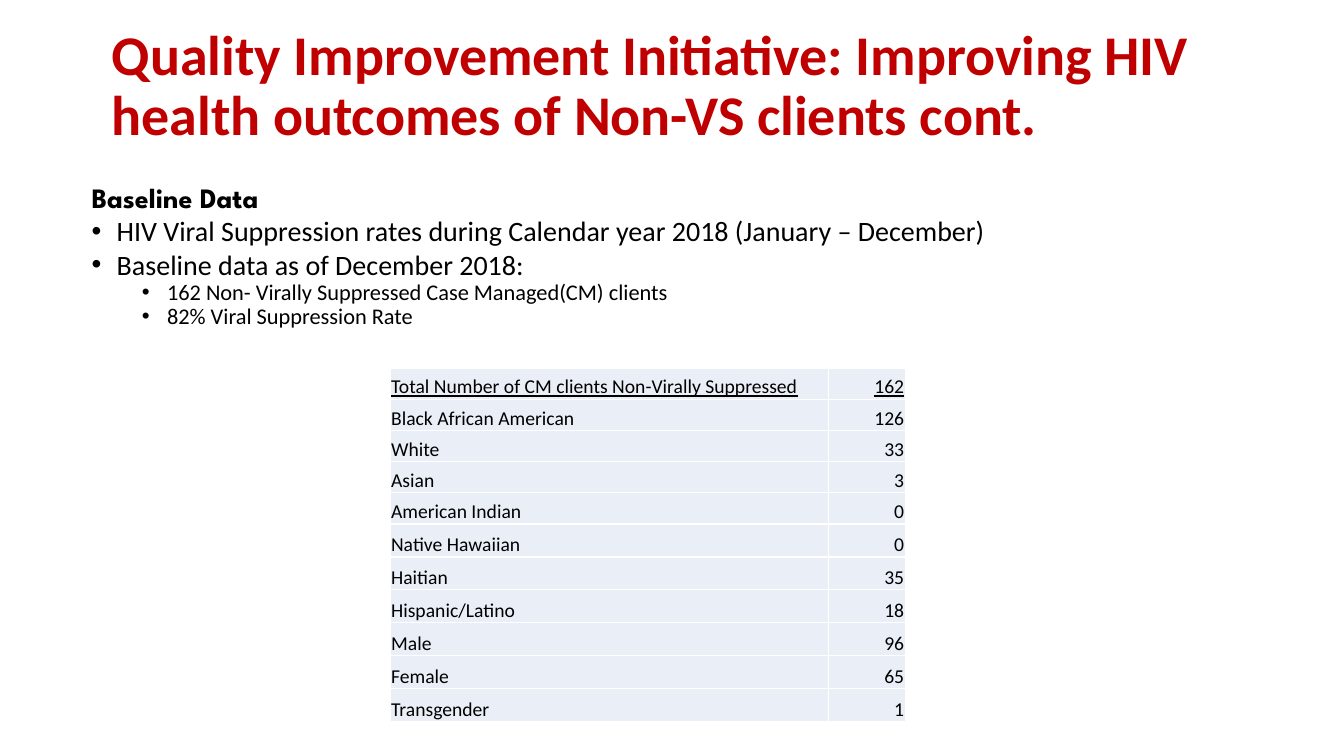
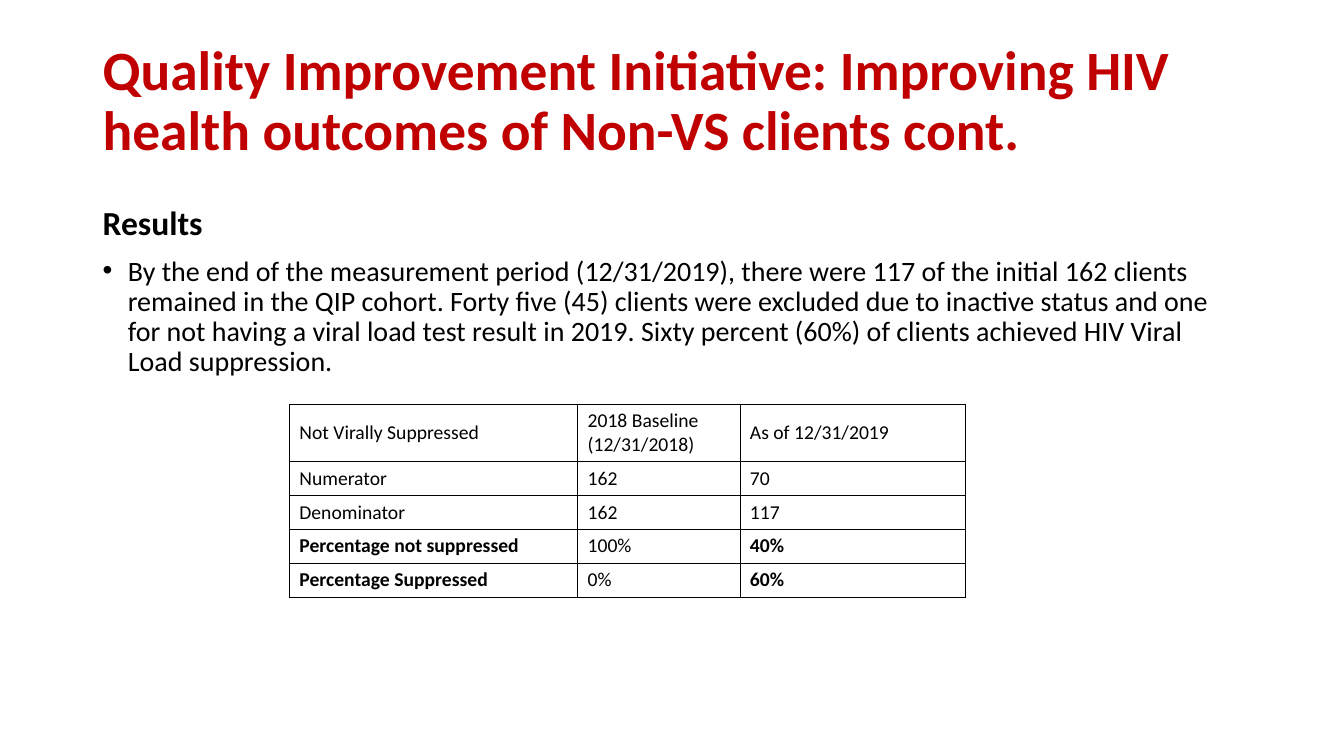
from lxml.etree import SubElement
from pptx import Presentation
from pptx.dml.color import RGBColor
from pptx.enum.text import MSO_ANCHOR, PP_ALIGN
from pptx.oxml.ns import qn
from pptx.util import Inches, Pt

COLORS = {"title": "C00000", "ink": "000000", "rule": "FFFFFF", "cell": "EAEFF7"}
TITLE = "Quality Improvement Initiative: Improving HIV health outcomes of Non-VS clients cont."
BODY_FONT = "Calibri"
HEADING_FONT = "League Spartan"


class Report:
    """Slides on a grid whose columns and rows are a tenth of an inch."""

    def __init__(self):
        self.deck = Presentation()
        self.deck.slide_width = self.grid(133.33)
        self.deck.slide_height = self.grid(75)
        self.page = None

    def grid(self, units):
        return Inches(units / 10)

    def add_page(self):
        self.page = self.deck.slides.add_slide(self.deck.slide_layouts[6])

    def add_box(self, place, anchor=MSO_ANCHOR.TOP):
        box = self.page.shapes.add_textbox(*map(self.grid, place))
        box.text_frame.word_wrap = True
        box.text_frame.vertical_anchor = anchor
        return box.text_frame

    def add_span(self, para, text, size, color="ink", font=BODY_FONT, bold=False, underline=False):
        span = para.add_run()
        span.text = text
        span.font.size = Pt(size)
        span.font.name = font
        span.font.bold = bold
        span.font.underline = underline
        span.font.color.rgb = RGBColor.from_string(COLORS[color])

    def add_bullet(self, para, indent):
        properties = para._p.get_or_add_pPr()
        properties.set("marL", str(Inches(indent)))
        properties.set("indent", str(Inches(-0.25)))
        SubElement(properties, qn("a:buFont"), typeface="Arial")
        SubElement(properties, qn("a:buChar"), char="•")

    def add_title(self, place, size):
        para = self.add_box(place, MSO_ANCHOR.MIDDLE).paragraphs[0]
        para.line_spacing = 0.9
        self.add_span(para, TITLE, size, "title", bold=True)

    def add_body(self, place, heading, bullets, heading_size, font=BODY_FONT, spacing=1, before=0):
        frame = self.add_box(place)
        para = frame.paragraphs[0]
        para.line_spacing, para.space_before = spacing, Pt(before)
        self.add_span(para, heading, heading_size, font=font, bold=True)
        for level, lines in bullets:
            para = frame.add_paragraph()
            para.level = level
            para.line_spacing = 0.9 if level else spacing
            para.space_before = Pt(before)
            self.add_bullet(para, 0.75 if level else 0.25)
            for number, line in enumerate(lines):
                if number:
                    para.add_line_break()
                self.add_span(para, line, 16 if level else 20)

    def add_borders(self, cell, color, width):
        properties = cell._tc.get_or_add_tcPr()
        for side in ("lnL", "lnR", "lnT", "lnB"):
            line = SubElement(properties, qn(f"a:{side}"), w=str(Pt(width)))
            fill = SubElement(line, qn("a:solidFill"))
            SubElement(fill, qn("a:srgbClr"), val=COLORS[color])

    def add_table(self, corner, columns, heights, rows, border, fill=None, tight=False, bold=(), underlined=()):
        place = (*corner, sum(columns), sum(heights))
        table = self.page.shapes.add_table(len(rows), len(columns), *map(self.grid, place)).table
        table.first_row = table.horz_banding = False
        for column, width in zip(table.columns, columns):
            column.width = self.grid(width)
        for top, (height, texts) in enumerate(zip(heights, rows)):
            table.rows[top].height = self.grid(height)
            for left, text in enumerate(texts):
                cell = table.cell(top, left)
                self.add_borders(cell, *border)
                if fill:
                    cell.fill.solid()
                    cell.fill.fore_color.rgb = RGBColor.from_string(COLORS[fill])
                else:
                    cell.fill.background()
                cell.vertical_anchor = MSO_ANCHOR.BOTTOM if tight else MSO_ANCHOR.MIDDLE
                para = cell.text_frame.paragraphs[0]
                if tight:
                    cell.margin_left = cell.margin_right = cell.margin_top = self.grid(0.1)
                    cell.margin_bottom = 0
                    para.alignment = PP_ALIGN.RIGHT if left else PP_ALIGN.LEFT
                self.add_span(para, text, 14, bold=(top, left) in bold, underline=top in underlined)


def add_baseline(report):
    report.add_page()
    report.add_title((10.1, 1.4, 115, 14.5), 40)
    bullets = [
        (0, ["HIV Viral Suppression rates during Calendar year 2018 (January – December)"]),
        (0, ["Baseline data as of December 2018:"]),
        (1, ["162 Non- Virally Suppressed Case Managed(CM) clients"]),
        (1, ["82% Viral Suppression Rate"]),
    ]
    report.add_body((8.1, 17.4, 117, 16), "Baseline Data", bullets, 20, HEADING_FONT)
    counts = [
        ("Total Number of CM clients Non-Virally Suppressed", "162"),
        ("Black African American", "126"),
        ("White", "33"),
        ("Asian", "3"),
        ("American Indian", "0"),
        ("Native Hawaiian", "0"),
        ("Haitian", "35"),
        ("Hispanic/Latino", "18"),
        ("Male", "96"),
        ("Female", "65"),
        ("Transgender", "1"),
    ]
    heights = [3.1] * 5 + [3.26] * 6
    report.add_table((38.7, 36.5), (43.5, 7.6), heights, counts, ("rule", 1), "cell", tight=True, underlined={0})


def add_results(report):
    report.add_page()
    lines = [
        "By the end of the measurement period (12/31/2019), there were 117 of the initial 162 clients",
        "remained in the QIP cohort. Forty five (45) clients were excluded due to inactive status and one "
        "for not having a viral load test result in 2019. Sixty percent (60%) of clients achieved HIV Viral "
        "Load suppression.",
    ]
    report.add_body((9.2, 20, 115, 47.6), "Results", [(0, lines)], 24, spacing=0.9, before=10)
    rates = [
        ("Not Virally Suppressed", "2018 Baseline (12/31/2018)", "As of 12/31/2019"),
        ("Numerator", "162", "70"),
        ("Denominator", "162", "117"),
        ("Percentage not suppressed", "100%", "40%"),
        ("Percentage Suppressed", "0%", "60%"),
    ]
    bold = {(row, column) for row in (3, 4) for column in (0, 2)}
    heights = [5.65] + [3.37] * 4
    report.add_table((28.7, 40.1), (28.6, 16.1, 22.4), heights, rates, ("ink", 0.5), bold=bold)
    report.add_title((9.2, 4, 115, 12.4), 39.6)


def main():
    report = Report()
    add_baseline(report)
    add_results(report)
    report.deck.save("out.pptx")


if __name__ == "__main__":
    main()
